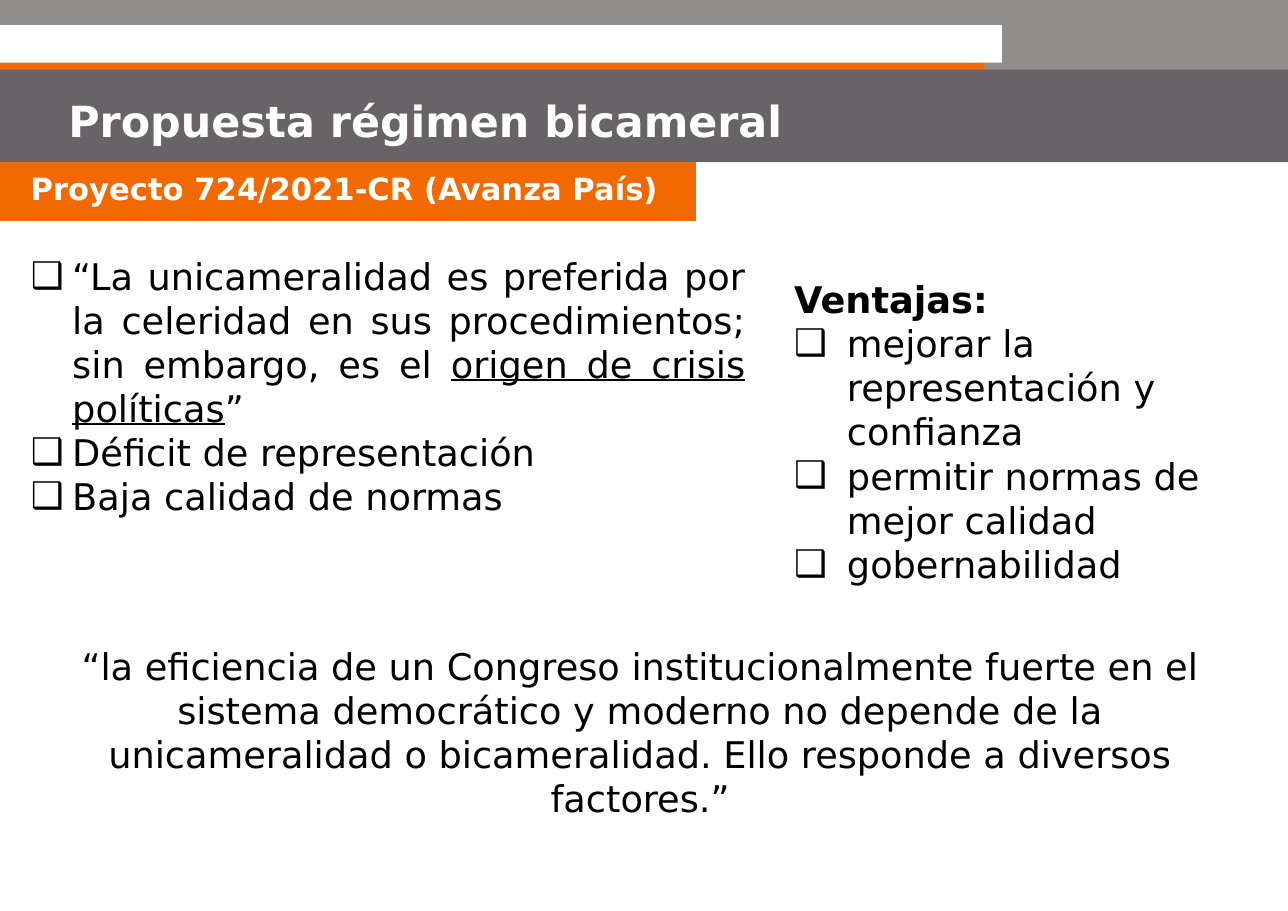
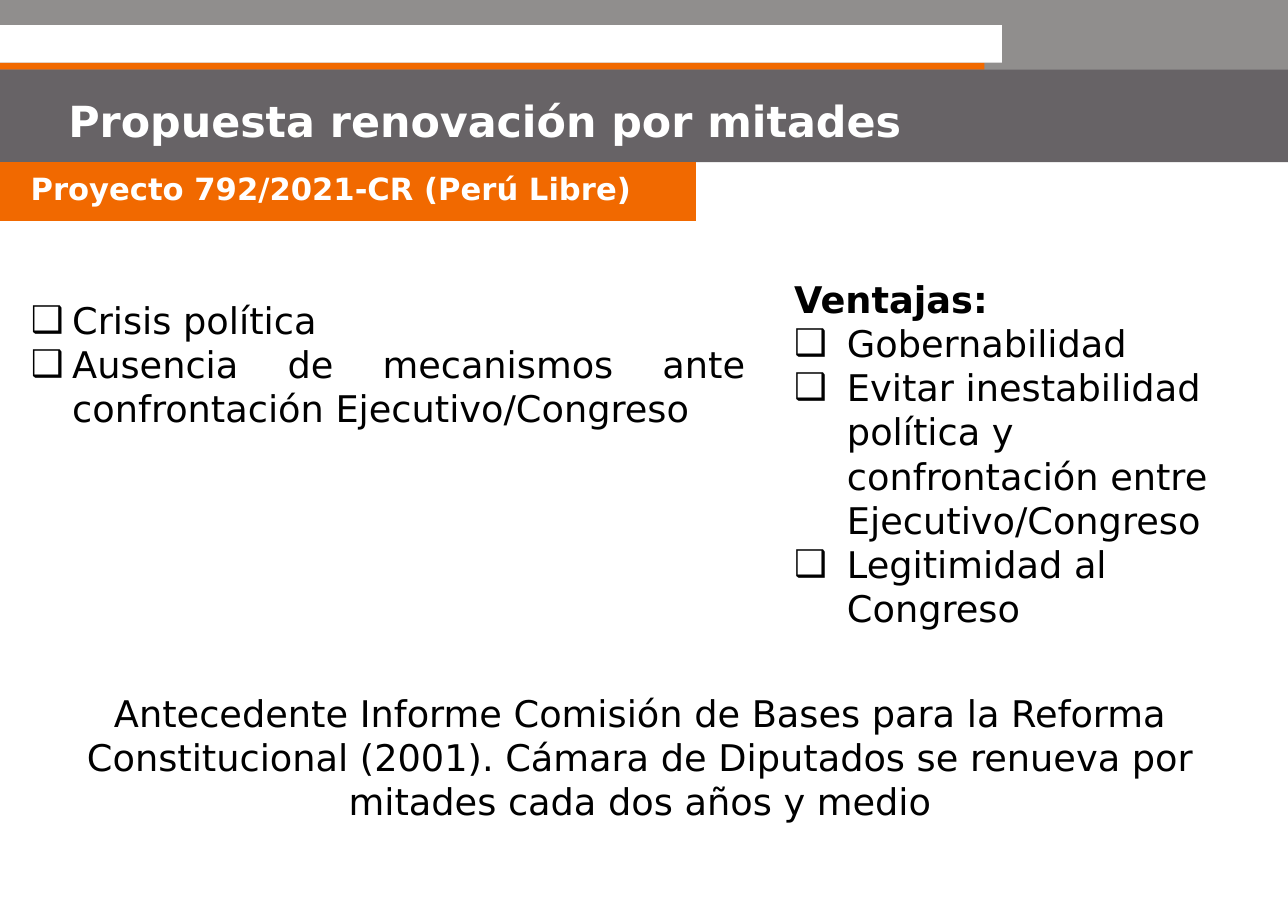
from lxml import etree
from pptx import Presentation, util as u
from pptx.dml import color
from pptx.enum import shapes, text
from pptx.oxml import ns

WIDTH, HEIGHT = 842, 595.5
SLIDES = [
    {
        "title": "Propuesta régimen bicameral",
        "tag": "Proyecto 724/2021-CR (Avanza País)",
        "reasons": [
            [("“La unicameralidad es preferida por la celeridad en sus procedimientos; "
              "sin embargo, es el ", False),
             ("origen de crisis políticas", True),
             ("”", False)],
            [("Déficit de representación", False)],
            [("Baja calidad de normas", False)],
        ],
        "reasons_top": 162,
        "benefits": ["mejorar la representación y confianza",
                     "permitir normas de mejor calidad",
                     "gobernabilidad"],
        "benefits_height": 211,
        "note": "“la eficiencia de un Congreso institucionalmente fuerte en el sistema "
                "democrático y moderno no depende de la unicameralidad o bicameralidad. "
                "Ello responde a diversos factores.”",
        "note_top": 417,
    },
    {
        "title": "Propuesta renovación por mitades",
        "tag": "Proyecto 792/2021-CR (Perú Libre)",
        "reasons": [
            [("Crisis política", False)],
            [("Ausencia de mecanismos ante confrontación Ejecutivo/Congreso", False)],
        ],
        "reasons_top": 190.8,
        "benefits": ["Gobernabilidad",
                     "Evitar inestabilidad política y confrontación entre Ejecutivo/Congreso",
                     "Legitimidad al Congreso"],
        "benefits_height": 240,
        "note": "Antecedente Informe Comisión de Bases para la Reforma Constitucional (2001). "
                "Cámara de Diputados se renueva por mitades cada dos años y medio",
        "note_top": 448,
    },
]


def rgb(value):
    """Turn a hex string into a colour."""
    return color.RGBColor.from_string(value)


class Deck:
    """Hold the shared style and the current slide."""

    FONT = "DejaVu Sans"
    ORANGE, GREY, DARK, WHITE, BLACK = "F16900", "908E8D", "676366", "FFFFFF", "000000"
    BODY_SIZE, BODY_LEADING = 24, 28.8
    ALIGN = text.PP_ALIGN

    def __init__(self):
        """Open an empty presentation of the right size."""
        self.prs = Presentation()
        self.prs.slide_width, self.prs.slide_height = u.Pt(WIDTH), u.Pt(HEIGHT)

    def new_slide(self):
        """Start a slide with the header bands."""
        self.s = self.prs.slides.add_slide(self.prs.slide_layouts[3])
        self.band(0, WIDTH, 47.5, self.GREY)
        self.band(41, 643.5, 4.5, self.ORANGE)
        self.band(16.5, 655, 24.5, self.WHITE)
        self.band(45.5, WIDTH, 60.5, self.DARK)

    def band(self, top, width, height, fill):
        """Draw a plain band from the left edge."""
        sp = self.s.shapes.add_shape(shapes.MSO_SHAPE.RECTANGLE, 0, u.Pt(top),
                                     u.Pt(width), u.Pt(height))
        sp.fill.solid()
        sp.fill.fore_color.rgb = rgb(fill)
        sp.line.fill.background()
        sp.shadow.inherit = False
        return sp

    def place(self, idx, left, top, width, height):
        """Move a placeholder into position, in front of the bands."""
        sp = self.s.placeholders[idx]
        sp.left, sp.top, sp.width, sp.height = map(u.Pt, (left, top, width, height))
        sp.element.getparent().append(sp.element)
        return self.frame(sp)

    def frame(self, sp):
        """Set up a text frame that wraps and starts at the top."""
        tf = sp.text_frame
        tf.word_wrap = True
        tf.auto_size = text.MSO_AUTO_SIZE.NONE
        tf.vertical_anchor = text.MSO_ANCHOR.TOP
        return tf

    def run(self, p, words, size, fill, bold=False, underline=False):
        """Add one formatted run."""
        r = p.add_run()
        r.text = words
        r.font.name, r.font.size = self.FONT, u.Pt(size)
        r.font.bold, r.font.underline = bold, underline
        r.font.color.rgb = rgb(fill)

    def para(self, tf, runs, align=ALIGN.LEFT, indent=0, bold=False):
        """Add a body paragraph, bulleted when it has an indent."""
        p = tf.paragraphs[0] if not tf.text else tf.add_paragraph()
        p.alignment = align
        p.space_before = p.space_after = u.Pt(0)
        p.line_spacing = u.Pt(self.BODY_LEADING)
        pPr = p._p.get_or_add_pPr()
        pPr.set("marL", str(u.Pt(indent)))
        pPr.set("indent", str(u.Pt(-indent)))
        if indent:
            etree.SubElement(pPr, ns.qn("a:buFont")).set("typeface", self.FONT)
            etree.SubElement(pPr, ns.qn("a:buChar")).set("char", "❑")
        else:
            etree.SubElement(pPr, ns.qn("a:buNone"))
        for words, underline in runs:
            self.run(p, words, self.BODY_SIZE, self.BLACK, bold, underline)

    def title(self, words):
        """Fill the title placeholder."""
        p = self.place(0, 37.5, 58, 701, 41).paragraphs[0]
        p.alignment = self.ALIGN.LEFT
        p.space_before = u.Pt(0)
        self.run(p, words, 28, self.WHITE, bold=True)

    def tag(self, words):
        """Draw the orange label below the title band."""
        tf = self.frame(self.band(106, 455, 38.5, self.ORANGE))
        tf.margin_left, tf.margin_top = u.Pt(20), u.Pt(5)
        p = tf.paragraphs[0]
        p.alignment = self.ALIGN.LEFT
        self.run(p, words, 20, self.WHITE, bold=True)

    def reasons(self, items, top):
        """Fill the left list."""
        tf = self.place(1, 13, top, 481.5, 181)
        for runs in items:
            self.para(tf, runs, self.ALIGN.JUSTIFY, indent=27)

    def benefits(self, items, height):
        """Fill the right list under its heading."""
        tf = self.place(2, 512, 177.5, 312, height)
        self.para(tf, [("Ventajas:", False)], bold=True)
        for words in items:
            self.para(tf, [(words, False)], indent=34.5)

    def note(self, words, top):
        """Add the centred closing text."""
        sp = self.s.shapes.add_textbox(u.Pt(13), u.Pt(top), u.Pt(811), u.Pt(124))
        self.para(self.frame(sp), [(words, False)], self.ALIGN.CENTER)


def main():
    """Build and save the slides."""
    deck = Deck()
    for page in SLIDES:
        deck.new_slide()
        deck.tag(page["tag"])
        deck.title(page["title"])
        deck.reasons(page["reasons"], page["reasons_top"])
        deck.benefits(page["benefits"], page["benefits_height"])
        deck.note(page["note"], page["note_top"])
    deck.prs.save("out.pptx")


if __name__ == "__main__":
    main()
